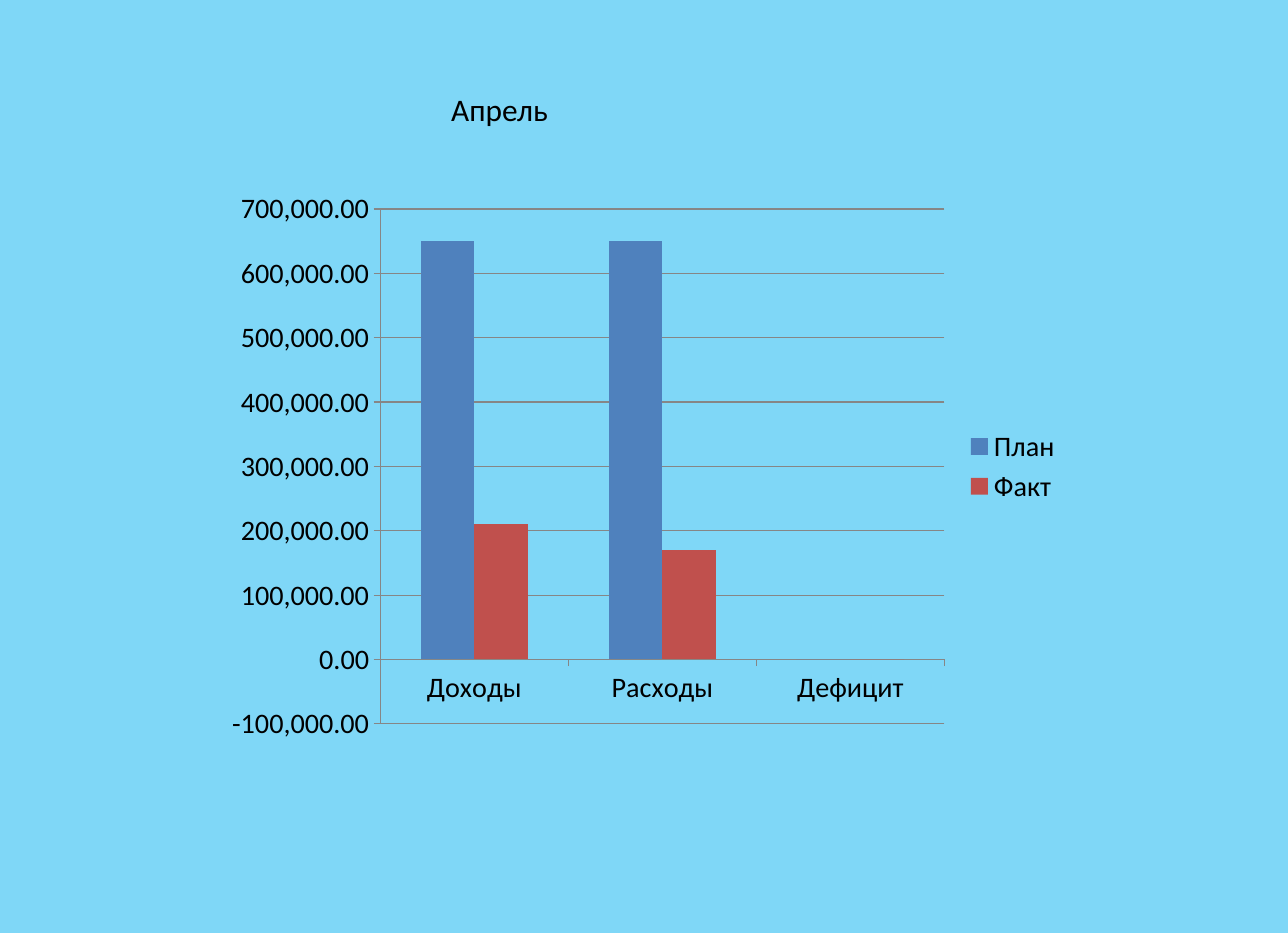
from dataclasses import dataclass

from pptx import Presentation
from pptx import util as u
from pptx.chart import data as cd
from pptx.dml import color
from pptx.enum import chart as ce, text as te

Pt = u.Pt


@dataclass(frozen=True)
class Theme:
    font: str = "Calibri"
    back: str = "7FD7F7"
    ink: str = "000000"
    line: str = "868686"
    plan: str = "4F81BD"
    fact: str = "C0504D"
    head: float = 20
    body: float = 18


THEME = Theme()
KINDS = ["Доходы", "Расходы", "Дефицит"]
SUMS = [
    ("План", THEME.plan, [650000, 650000, 0]),
    ("Факт", THEME.fact, [210000, 170000, 0]),
]


def rgb(code):
    return color.RGBColor.from_string(code)


def paint(fill, code):
    fill.solid()
    fill.fore_color.rgb = rgb(code)


def style(font, size=THEME.body, ink=THEME.ink):
    font.name = THEME.font
    font.size = Pt(size)
    font.bold = False
    font.color.rgb = rgb(ink)


def write(shape, words, size=THEME.body, ink=THEME.ink, align=te.PP_ALIGN.LEFT):
    frame = shape.text_frame
    frame.text = words
    frame.word_wrap = False
    frame.vertical_anchor = te.MSO_ANCHOR.TOP
    frame.auto_size = te.MSO_AUTO_SIZE.SHAPE_TO_FIT_TEXT
    para = frame.paragraphs[0]
    para.alignment = align
    para.line_spacing = 1.0
    para.space_before = Pt(0)
    style(para.runs[0].font, size, ink)


def place(shape, left, top, wide, high):
    shape.left, shape.top = Pt(left), Pt(top)
    shape.width, shape.height = Pt(wide), Pt(high)


def rule(line):
    line.color.rgb = rgb(THEME.line)
    line.width = Pt(0.75)


def trim(axis):
    axis.major_tick_mark = ce.XL_TICK_MARK.OUTSIDE
    axis.minor_tick_mark = ce.XL_TICK_MARK.NONE
    rule(axis.format.line)
    style(axis.tick_labels.font)


def bars(slide, left, top, wide, high):
    data = cd.CategoryChartData(number_format="#,##0.00")
    data.categories = KINDS
    for name, _, sums in SUMS:
        data.add_series(name, sums)
    chart = slide.shapes.add_chart(
        ce.XL_CHART_TYPE.COLUMN_CLUSTERED,
        Pt(left), Pt(top), Pt(wide), Pt(high), data).chart
    chart.has_title = False
    style(chart.font)

    # Columns
    plot = chart.plots[0]
    plot.gap_width, plot.overlap = 150, 0
    plot.vary_by_categories = False
    for row, (_, tint, _) in zip(plot.series, SUMS):
        paint(row.format.fill, tint)
        row.invert_if_negative = False

    # Axes and grid
    trim(chart.category_axis)
    axis = chart.value_axis
    trim(axis)
    axis.minimum_scale, axis.maximum_scale = -100000, 700000
    axis.major_unit = 100000
    axis.tick_labels.number_format = "#,##0.00"
    axis.tick_labels.number_format_is_linked = False
    axis.has_major_gridlines = True
    rule(axis.major_gridlines.format.line)

    # Legend
    chart.has_legend = True
    chart.legend.position = ce.XL_LEGEND_POSITION.RIGHT
    chart.legend.include_in_layout = False
    style(chart.legend.font)


def main():
    deck = Presentation()
    deck.slide_width, deck.slide_height = Pt(822.24), Pt(595.44)
    slide = deck.slides.add_slide(deck.slide_layouts[5])
    paint(slide.background.fill, THEME.back)

    # Chart of plan and fact
    bars(slide, 137.2, 115.2, 547.9, 365)

    # Month title
    title = slide.shapes.title
    place(title, 280.8, 54, 77, 31.5)
    write(title, "Апрель", size=THEME.head)

    deck.save("out.pptx")


if __name__ == "__main__":
    main()
